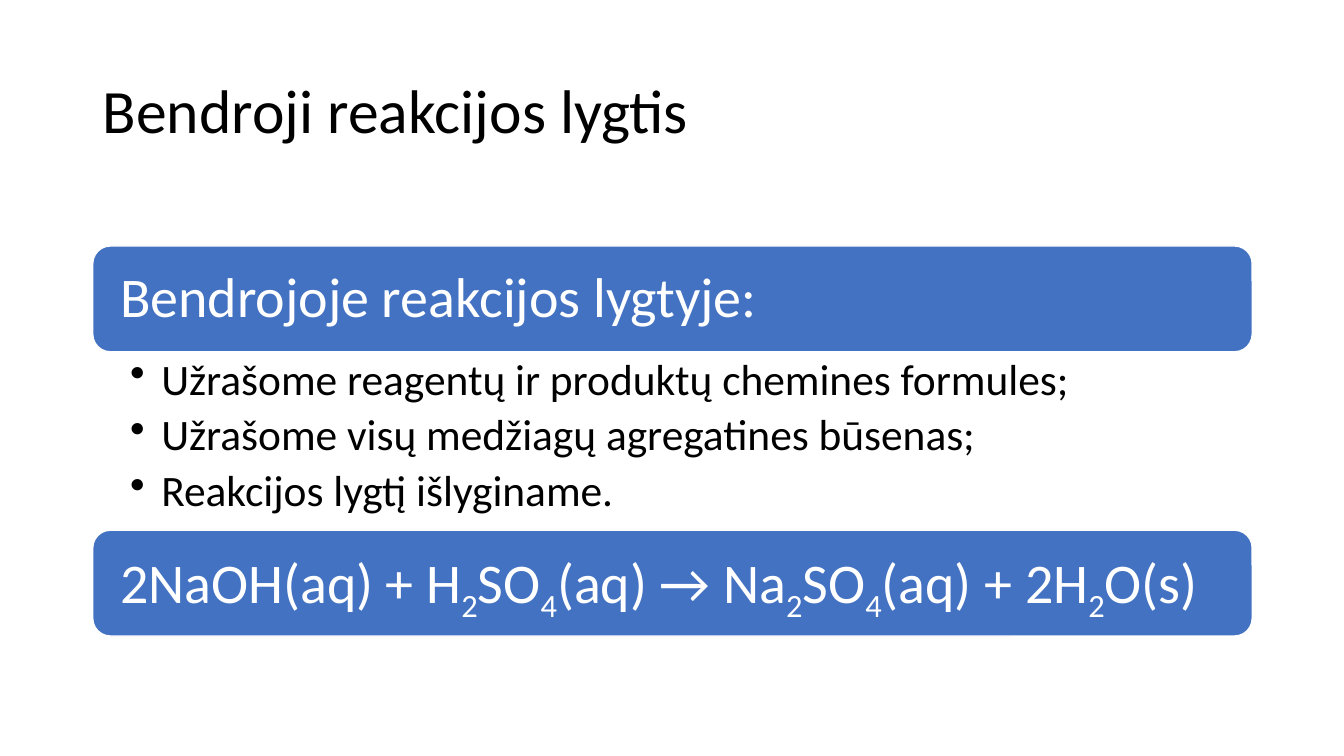
from lxml import etree
from pptx import Presentation
from pptx.dml.color import RGBColor
from pptx.enum.shapes import MSO_SHAPE
from pptx.enum.text import MSO_ANCHOR, MSO_AUTO_SIZE, PP_ALIGN
from pptx.oxml.ns import qn
from pptx.util import Emu, Pt

ROUNDED = MSO_SHAPE.ROUNDED_RECTANGLE
TOP, MIDDLE = MSO_ANCHOR.TOP, MSO_ANCHOR.MIDDLE
LEFT_ALIGNED = PP_ALIGN.LEFT
NO_AUTOFIT = MSO_AUTO_SIZE.NONE
TITLE_ONLY = 5
EMU_PER_PX = 9144
COLORS = {"text": "000000", "banner": "4372C3", "light": "FFFFFF"}

LEFT, WIDTH = 92, 1150
BANNER_TOP, BANNER_HEIGHT, LIST_HEIGHT = 244, 105, 177
LIST_TOP = BANNER_TOP + BANNER_HEIGHT
EQUATION_TOP = LIST_TOP + LIST_HEIGHT
STEPS = [
    "Užrašome reagentų ir produktų chemines formules;",
    "Užrašome visų medžiagų agregatines būsenas;",
    "Reakcijos lygtį išlyginame.",
]
EQUATION = "2NaOH(aq) + H_2_SO_4_(aq) → Na_2_SO_4_(aq) + 2H_2_O(s)"


def px(value):
    return Emu(value * EMU_PER_PX)


def color(name):
    return RGBColor.from_string(COLORS[name])


class ReactionSlide:
    """Holds the text style and the slide that receives each element."""

    font_name = "Calibri"
    line_spacing = 0.9

    def __init__(self, deck):
        self.page = deck.slides.add_slide(deck.slide_layouts[TITLE_ONLY])

    def set_frame(self, frame, anchor, insets):
        frame.word_wrap = True
        frame.auto_size = NO_AUTOFIT
        frame.vertical_anchor = anchor
        (frame.margin_left, frame.margin_top,
         frame.margin_right, frame.margin_bottom) = map(px, insets)

    def style(self, para, size, color_name):
        para.alignment = LEFT_ALIGNED
        para.line_spacing = self.line_spacing
        para.font.name = self.font_name
        para.font.size = Pt(size)
        para.font.color.rgb = color(color_name)

    def title(self, text, top, height):
        box = self.page.shapes.title
        box.left, box.top = px(LEFT), px(top)
        box.width, box.height = px(WIDTH), px(height)
        self.set_frame(box.text_frame, MIDDLE, (10, 5, 10, 5))
        box.text_frame.text = text
        self.style(box.text_frame.paragraphs[0], 44, "text")

    def banner(self, text, top):
        box = self.page.shapes.add_shape(
            ROUNDED, px(LEFT), px(top), px(WIDTH), px(BANNER_HEIGHT))
        box.adjustments[0] = 0.167
        box.shadow.inherit = False
        box.fill.solid()
        box.fill.fore_color.rgb = color("banner")
        box.line.color.rgb = color("light")
        box.line.width = Pt(1)
        self.set_frame(box.text_frame, MIDDLE, (22, 17, 22, 17))
        para = box.text_frame.paragraphs[0]
        self.style(para, 40, "light")
        for index, part in enumerate(text.split("_")):
            span = para.add_run()
            span.text = part
            if index % 2:
                span.font._element.set("baseline", "-25000")

    def bullets(self, items, top, height):
        box = self.page.shapes.add_textbox(
            px(LEFT), px(top), px(WIDTH), px(height))
        frame = box.text_frame
        self.set_frame(frame, TOP, (37, 6, 31, 6))
        for index, item in enumerate(items):
            para = frame.add_paragraph() if index else frame.paragraphs[0]
            para.text = item
            para.level = 1
            self.style(para, 31, "text")
            para.space_before = Pt(6.2 if index else 0)
            properties = para._p.get_or_add_pPr()
            properties.set("marL", str(px(31)))
            properties.set("indent", str(px(-31)))
            bullet = etree.SubElement(properties, qn("a:buChar"))
            bullet.set("char", "•")
            properties.remove(bullet)
            properties.insert_element_before(bullet, "a:tabLst", "a:defRPr")


def main():
    deck = Presentation()
    deck.slide_width, deck.slide_height = px(1333), px(750)
    slide = ReactionSlide(deck)
    slide.title("Bendroji reakcijos lygtis", 40, 145)
    slide.banner("Bendrojoje reakcijos lygtyje:", BANNER_TOP)
    slide.bullets(STEPS, LIST_TOP, LIST_HEIGHT)
    slide.banner(EQUATION, EQUATION_TOP)
    deck.save("out.pptx")


if __name__ == "__main__":
    main()
